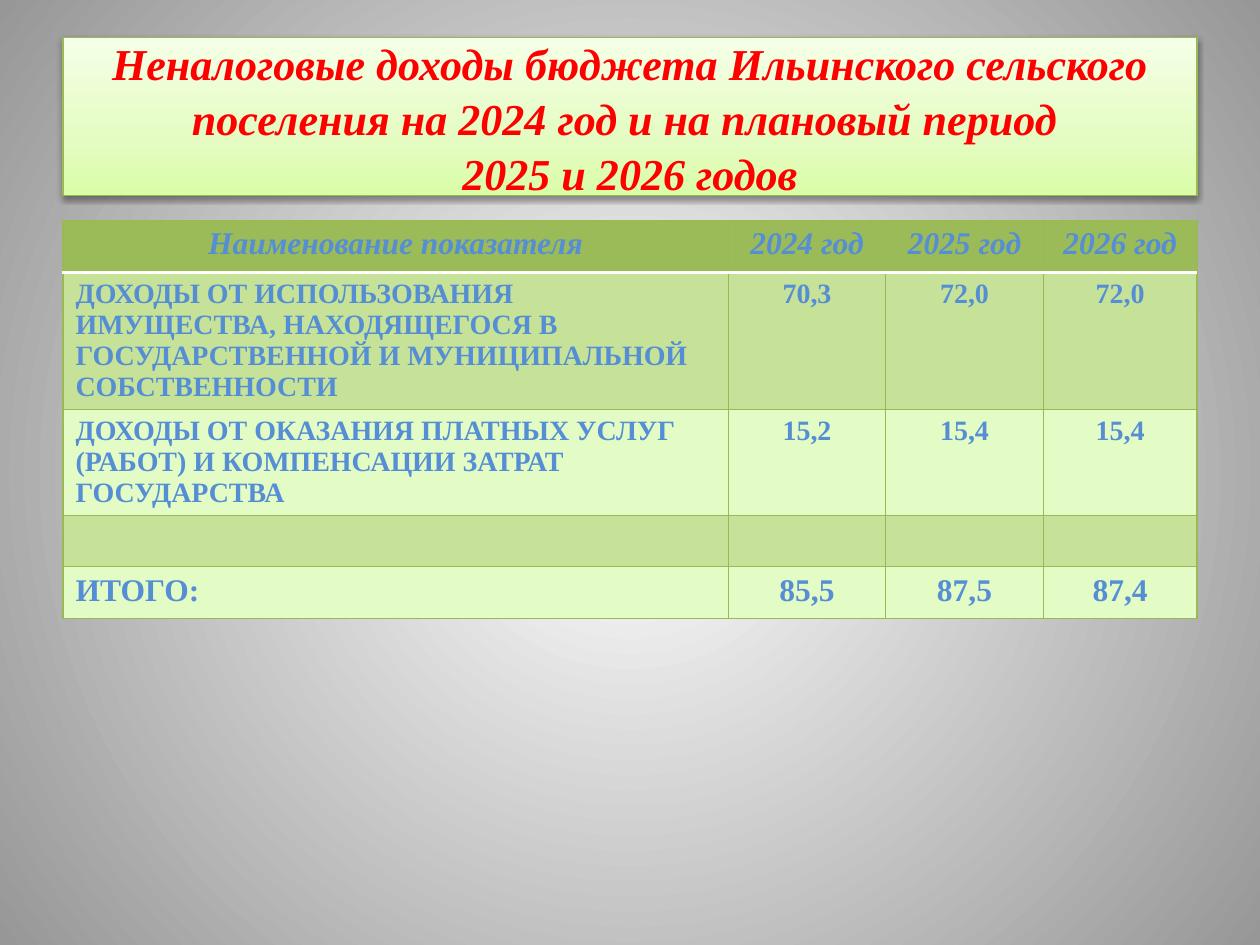
import pptx
import pptx.dml.color
import pptx.enum.text
import pptx.oxml
import pptx.oxml.ns
import pptx.util
from pptx.util import Inches

COLORS = {
    "title": "FF0000",
    "text": "558ED5",
    "border": "98B955",
    "header": "9BBB59",
    "band": "C6E298",
    "plain": "E3FBC4",
    "divider": "FFFFFF",
}
FONT = "Times New Roman"
CENTER = pptx.enum.text.PP_ALIGN.CENTER
NAMESPACE = pptx.oxml.ns.nsdecls("a")


def gradient(stops, direction):
    """Return a gradient fill element from (percent, colour) stops."""
    stop_xml = "".join(
        f'<a:gs pos="{percent * 1000}"><a:srgbClr val="{color}"/></a:gs>'
        for percent, color in stops
    )
    return pptx.oxml.parse_xml(
        f'<a:gradFill {NAMESPACE} rotWithShape="1"><a:gsLst>{stop_xml}</a:gsLst>{direction}</a:gradFill>'
    )


def add_run(paragraph, text, size, color, italic):
    run = paragraph.add_run()
    run.text = text
    run.font.name = FONT
    run.font.size = pptx.util.Pt(size)
    run.font.bold = True
    run.font.italic = italic
    run.font.color.rgb = pptx.dml.color.RGBColor.from_string(COLORS[color])


presentation = pptx.Presentation()
presentation.slide_width = Inches(10)
presentation.slide_height = Inches(7.5)
slide = presentation.slides.add_slide(presentation.slide_layouts[5])

# Background
slide.background.fill.solid()
background_fill = slide.element.find(".//" + pptx.oxml.ns.qn("a:solidFill"))
background_fill.getparent().replace(background_fill, gradient(
    [(0, "FFFFFF"), (100, "979797")],
    '<a:path path="circle"><a:fillToRect l="50000" t="50000" r="50000" b="50000"/></a:path>',
))

# Title
title = slide.shapes.title
title.left, title.top, title.width, title.height = map(Inches, (0.5, 0.3, 9, 1.25))
properties = title.element.spPr
properties.append(pptx.oxml.parse_xml(f'<a:prstGeom {NAMESPACE} prst="rect"><a:avLst/></a:prstGeom>'))
properties.append(gradient(
    [(0, "DAFDA7"), (35, "E4FCC2"), (100, "F5FFE7")], '<a:lin ang="16200000" scaled="0"/>'
))
title.line.color.rgb = pptx.dml.color.RGBColor.from_string(COLORS["border"])
title.line.width = pptx.util.Pt(0.75)
properties.append(pptx.oxml.parse_xml(
    f'<a:effectLst {NAMESPACE}><a:outerShdw blurRad="39370" dist="20320" dir="5400000" rotWithShape="0">'
    '<a:srgbClr val="000000"><a:alpha val="38000"/></a:srgbClr></a:outerShdw></a:effectLst>'
))
title.text_frame.word_wrap = True
title.text_frame.auto_size = pptx.enum.text.MSO_AUTO_SIZE.NONE
title.text_frame.vertical_anchor = pptx.enum.text.MSO_ANCHOR.MIDDLE
paragraph = title.text_frame.paragraphs[0]
paragraph.alignment = CENTER
paragraph.line_spacing = 1.04
add_run(paragraph, "Неналоговые доходы бюджета Ильинского сельского поселения на 2024 год и на плановый период ",
        25.2, "title", True)
paragraph.add_line_break()
add_run(paragraph, "2025 и 2026 годов", 25.2, "title", True)

# Income table: cell texts, text size, fill
rows = [
    (["Наименование показателя", "2024 год", "2025 год", "2026 год"], 18, "header"),
    (["ДОХОДЫ ОТ ИСПОЛЬЗОВАНИЯ ИМУЩЕСТВА, НАХОДЯЩЕГОСЯ В ГОСУДАРСТВЕННОЙ И МУНИЦИПАЛЬНОЙ СОБСТВЕННОСТИ",
      "70,3", "72,0", "72,0"], 16, "band"),
    (["ДОХОДЫ ОТ ОКАЗАНИЯ ПЛАТНЫХ УСЛУГ (РАБОТ) И КОМПЕНСАЦИИ ЗАТРАТ ГОСУДАРСТВА",
      "15,2", "15,4", "15,4"], 16, "plain"),
    ([""] * 4, 18, "band"),
    (["ИТОГО:", "85,5", "87,5", "87,4"], 18, "plain"),
]
column_widths = [5.28, 1.25, 1.25, 1.22]
row_height = 0.41
table = slide.shapes.add_table(
    len(rows), len(column_widths), Inches(0.5), Inches(1.75), Inches(9), Inches(row_height * len(rows))
).table
for column, width in zip(table.columns, column_widths):
    column.width = Inches(width)

for row_index, (texts, size, fill) in enumerate(rows):
    table.rows[row_index].height = Inches(row_height)
    for column_index, text in enumerate(texts):
        cell = table.cell(row_index, column_index)
        paragraph = cell.text_frame.paragraphs[0]
        if row_index == 0 or column_index > 0:
            paragraph.alignment = CENTER
        if text:
            add_run(paragraph, text, size, "text", row_index == 0)
        cell_properties = cell._tc.get_or_add_tcPr()
        for side in ("lnL", "lnR", "lnT", "lnB"):
            is_divider = (row_index, side) in ((0, "lnB"), (1, "lnT"))
            color, width = ("divider", 2) if is_divider else ("border", 0.75)
            cell_properties.append(pptx.oxml.parse_xml(
                f'<a:{side} {NAMESPACE} w="{pptx.util.Pt(width)}"><a:solidFill>'
                f'<a:srgbClr val="{COLORS[color]}"/></a:solidFill></a:{side}>'
            ))
        cell.fill.solid()
        cell.fill.fore_color.rgb = pptx.dml.color.RGBColor.from_string(COLORS[fill])

presentation.save("out.pptx")
